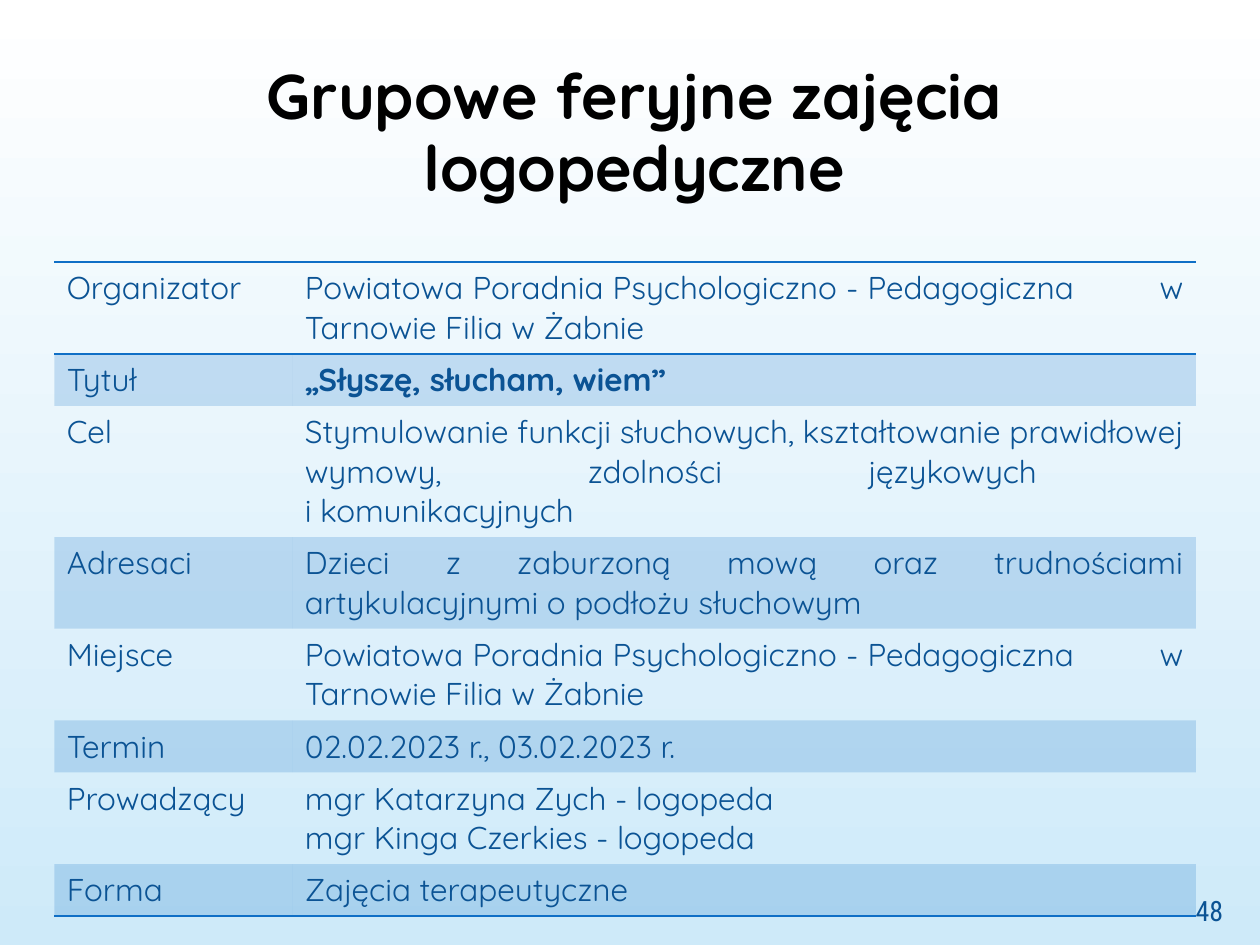
from typing import NamedTuple

from lxml.etree import SubElement
from pptx import Presentation
from pptx.dml.color import RGBColor
from pptx.enum.text import MSO_ANCHOR, MSO_AUTO_SIZE, PP_ALIGN
from pptx.oxml import parse_xml
from pptx.oxml.ns import nsdecls, qn
from pptx.util import Pt

WHITE = RGBColor(0xFF, 0xFF, 0xFF)
SKY = RGBColor(0xCE, 0xEA, 0xF9)
BLACK = RGBColor(0, 0, 0)
NAVY = RGBColor(0x0B, 0x53, 0x94)
BLUE = RGBColor(0x0F, 0x6F, 0xC6)
FONT = "Quicksand"
LEFT, TOP = 31, 149.8
COLS = (136, 516.4)
ROW, LINE = 29.7, 22.5
TAB = 487


class Row(NamedTuple):
    label: str
    text: str
    lines: int = 1
    bold: bool = False


OFFICE = "Powiatowa Poradnia Psychologiczno - Pedagogiczna\tw Tarnowie Filia w Żabnie"
ROWS = [
    Row("Organizator", OFFICE, 2),
    Row("Tytuł", "„Słyszę, słucham, wiem”", bold=True),
    Row("Cel", "Stymulowanie funkcji słuchowych, kształtowanie prawidłowej wymowy, "
        "zdolności językowych \vi komunikacyjnych", 3),
    Row("Adresaci", "Dzieci z zaburzoną mową oraz trudnościami artykulacyjnymi "
        "o podłożu słuchowym", 2),
    Row("Miejsce", OFFICE, 2),
    Row("Termin", "02.02.2023 r., 03.02.2023 r."),
    Row("Prowadzący", "mgr Katarzyna Zych - logopeda\nmgr Kinga Czerkies - logopeda", 2),
    Row("Forma", "Zajęcia terapeutyczne"),
]


def write(frame, text: str, *, size: float = 18, color: RGBColor = NAVY,
          font: str = FONT, bold: bool = False, align=PP_ALIGN.LEFT,
          space: float | None = None) -> None:
    frame.text = text
    for para in frame.paragraphs:
        para.alignment = align
        para.line_spacing = space
        if "\t" in text:
            tabs = SubElement(para._p.get_or_add_pPr(), qn("a:tabLst"))
            SubElement(tabs, qn("a:tab"), pos=str(Pt(TAB)), algn="l")
        for run in para.runs:
            run.font.name = font
            run.font.size = Pt(size)
            run.font.bold = bold
            run.font.color.rgb = color


def tint(cell) -> None:
    """Fill the cell with blue at 20 % opacity."""
    cell.fill.solid()
    cell.fill.fore_color.rgb = BLUE
    color = cell._tc.tcPr.find(".//" + qn("a:srgbClr"))
    SubElement(color, qn("a:alpha"), val="20000")


def rule(cell, sides: str) -> None:
    """Draw 1 pt lines on the given sides, T before B."""
    for spot, side in enumerate(sides):
        cell._tc.get_or_add_tcPr().insert(spot, parse_xml(
            f'<a:ln{side} {nsdecls("a")} w="{Pt(1)}"><a:solidFill>'
            f'<a:srgbClr val="{BLUE}"/></a:solidFill></a:ln{side}>'))


def fill_table(slide) -> None:
    high = sum(ROW + LINE * (row.lines - 1) for row in ROWS)
    table = slide.shapes.add_table(
        len(ROWS), len(COLS), Pt(LEFT), Pt(TOP), Pt(sum(COLS)), Pt(high)).table
    table.first_row = table.horz_banding = False
    style = table._tbl.tblPr.find(qn("a:tableStyleId"))
    style.text = "{2D5ABB26-0587-4C30-8999-92F81FD0307C}"
    for col, width in zip(table.columns, COLS):
        col.width = Pt(width)
    sides = {0: "TB", len(ROWS) - 1: "B"}
    for num, row in enumerate(ROWS):
        table.rows[num].height = Pt(ROW + LINE * (row.lines - 1))
        label, value = table.rows[num].cells
        write(label.text_frame, row.label)
        write(value.text_frame, row.text, bold=row.bold, align=PP_ALIGN.JUSTIFY)
        for cell in (label, value):
            if num % 2:
                tint(cell)
            else:
                cell.fill.background()
            rule(cell, sides.get(num, ""))


def paint(slide) -> None:
    """Shade the background from white at the top to sky blue."""
    fill = slide.background.fill
    fill.gradient()
    fill.gradient_angle = 270
    for stop, color, place in zip(fill.gradient_stops, (WHITE, SKY), (0, 1)):
        stop.color.rgb = color
        stop.position = place


def main() -> None:
    deck = Presentation()
    deck.slide_width, deck.slide_height = Pt(720), Pt(540)
    slide = deck.slides.add_slide(deck.slide_layouts[5])
    paint(slide)

    title = slide.shapes.title
    title.left, title.top = Pt(LEFT), Pt(26)
    title.width, title.height = Pt(663), Pt(101)
    frame = title.text_frame
    frame.auto_size = MSO_AUTO_SIZE.NONE
    frame.vertical_anchor = MSO_ANCHOR.MIDDLE
    write(frame, "Grupowe feryjne zajęcia logopedyczne", size=36, color=BLACK,
          bold=True, align=PP_ALIGN.CENTER, space=0.95)

    fill_table(slide)

    page = slide.shapes.add_textbox(Pt(660), Pt(505.5), Pt(46), Pt(29)).text_frame
    page.word_wrap = True
    page.vertical_anchor = MSO_ANCHOR.MIDDLE
    write(page, "48", size=16, font="Roboto Condensed", align=PP_ALIGN.RIGHT)
    deck.save("out.pptx")


if __name__ == "__main__":
    main()
